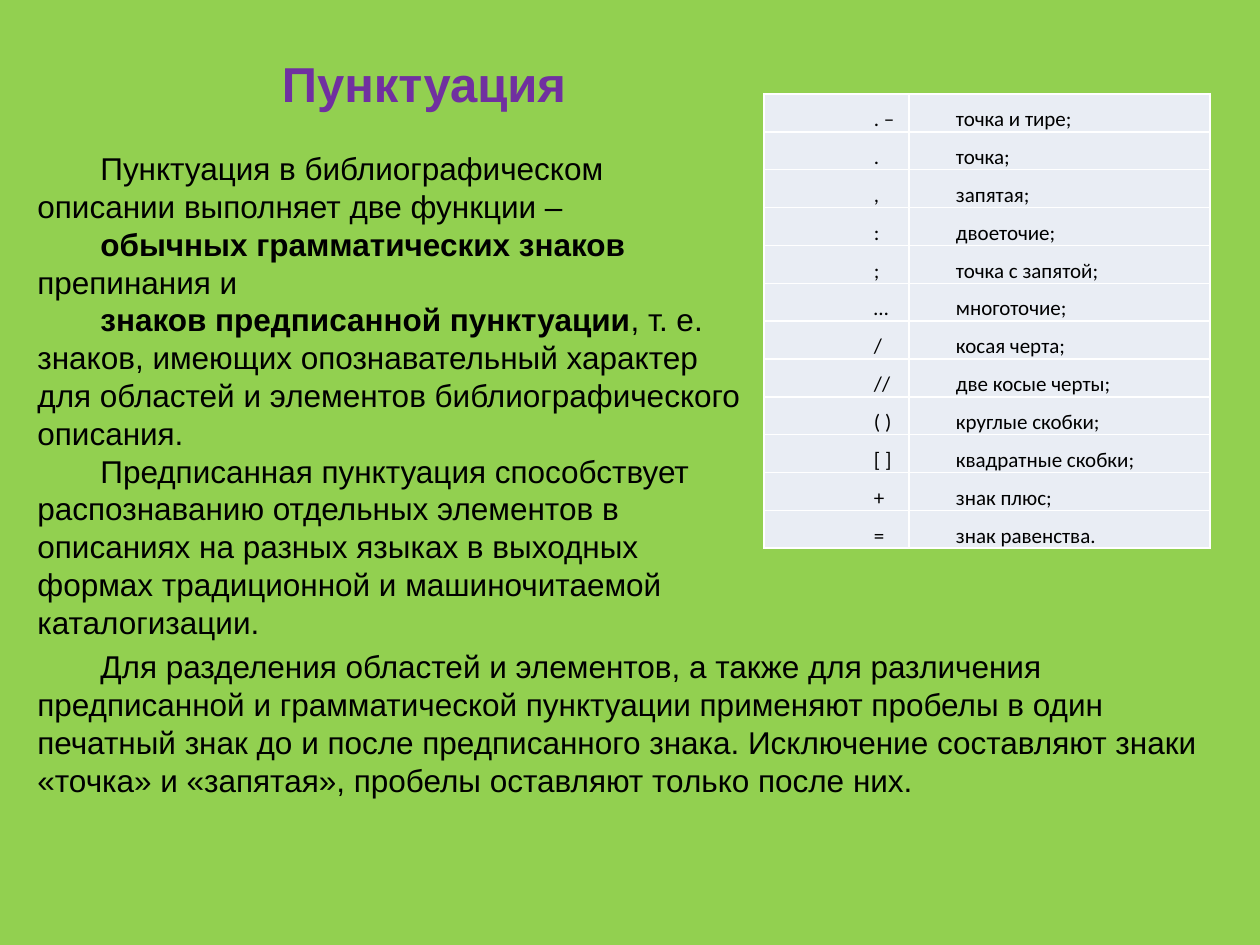
from pptx import Presentation, util as u
from pptx.dml.color import RGBColor
from pptx.enum import text
from pptx.oxml import parse_xml
from pptx.oxml.ns import nsdecls

COLORS = {"bg": "92D050", "title": "7030A0", "text": "000000", "cell": "E9EDF4", "border": "FFFFFF"}
TITLE = "Пунктуация"
FUNCTIONS = [
    [("Пунктуация в библиографическом описании выполняет две функции –", False)],
    [("обычных грамматических знаков ", True), ("препинания и", False)],
    [("знаков предписанной пунктуации", True),
     (", т. е. знаков, имеющих опознавательный характер для областей и элементов "
      "библиографического описания.", False)],
    [("Предписанная пунктуация способствует распознаванию отдельных элементов в описаниях "
      "на разных языках в выходных формах традиционной и машиночитаемой каталогизации.", False)],
]
SPACES = [
    [("Для разделения областей и элементов, а также для различения предписанной и "
      "грамматической пунктуации применяют пробелы в один печатный знак до и после "
      "предписанного знака. Исключение составляют знаки «точка» и «запятая», пробелы "
      "оставляют только после них.", False)],
]
SIGNS = [
    (". –", "точка и тире;"), (".", "точка;"), (",", "запятая;"), (":", "двоеточие;"),
    (";", "точка с запятой;"), ("…", "многоточие;"), ("/", "косая черта;"),
    ("//", "две косые черты;"), ("( )", "круглые скобки;"), ("[ ]", "квадратные скобки;"),
    ("+", "знак плюс;"), ("=", "знак равенства."),
]
TITLE_BOX = (25, 47, 735, 70)
TEXT_BOXES = [((25, 143, 735, 549), FUNCTIONS), ((25, 641, 1211, 223), SPACES)]
TABLE_BOX = (764, 94, 446, 454)
COLUMNS = [(145, 63), (301, 0)]
FIRST_LINE, CELL_FIRST_LINE = 63, 38


def px(n):
    return n * u.Inches(1) // 126


def rgb(name):
    return RGBColor.from_string(COLORS[name])


def set_all(obj, values):
    for key, value in values.items():
        setattr(obj, key, value)


def indent(p, left, first):
    pPr = p._p.get_or_add_pPr()
    pPr.set("marL", str(px(left)))
    pPr.set("indent", str(px(first)))


def add_run(p, content, size, color="text", bold=False, font="Arial"):
    r = p.add_run()
    r.text = content
    set_all(r.font, {"size": u.Pt(size), "bold": bold, "name": font})
    r.font.color.rgb = rgb(color)


def add_text(s, box, paragraphs):
    tf = s.shapes.add_textbox(*map(px, box)).text_frame
    tf.word_wrap = True
    for i, runs in enumerate(paragraphs):
        p = tf.add_paragraph() if i else tf.paragraphs[0]
        indent(p, 0, FIRST_LINE)
        for content, bold in runs:
            add_run(p, content, 18, bold=bold)


def add_borders(cell):
    tcPr = cell._tc.get_or_add_tcPr()
    for i, side in enumerate(("lnL", "lnR", "lnT", "lnB")):
        tcPr.insert(i, parse_xml(
            f'<a:{side} {nsdecls("a")} w="12700"><a:solidFill>'
            f'<a:srgbClr val="{COLORS["border"]}"/></a:solidFill></a:{side}>'))


def add_signs(s):
    table = s.shapes.add_table(len(SIGNS), len(COLUMNS), *map(px, TABLE_BOX)).table
    set_all(table, {"first_row": False, "horz_banding": False})
    for column, (width, _) in zip(table.columns, COLUMNS):
        column.width = px(width)
    for row, values in zip(table.rows, SIGNS):
        for cell, value, (_, left) in zip(row.cells, values, COLUMNS):
            set_all(cell, {"margin_left": px(9), "margin_right": px(9),
                           "margin_top": 0, "margin_bottom": 0})
            cell.fill.solid()
            cell.fill.fore_color.rgb = rgb("cell")
            add_borders(cell)
            p = cell.text_frame.paragraphs[0]
            p.line_spacing = 1.5
            indent(p, left, CELL_FIRST_LINE)
            add_run(p, value, 12, font="Calibri")


def main():
    prs = Presentation()
    set_all(prs, {"slide_width": u.Inches(10), "slide_height": u.Inches(7.5)})
    s = prs.slides.add_slide(prs.slide_layouts[5])
    s.background.fill.solid()
    s.background.fill.fore_color.rgb = rgb("bg")
    title = s.shapes.title
    set_all(title, dict(zip(("left", "top", "width", "height"), map(px, TITLE_BOX))))
    set_all(title.text_frame, {"vertical_anchor": text.MSO_ANCHOR.TOP, "word_wrap": True})
    p = title.text_frame.paragraphs[0]
    p.alignment = text.PP_ALIGN.CENTER
    indent(p, 0, FIRST_LINE)
    add_run(p, TITLE, 28, "title", True)
    for box, paragraphs in TEXT_BOXES:
        add_text(s, box, paragraphs)
    add_signs(s)
    prs.save("out.pptx")


if __name__ == "__main__":
    main()
